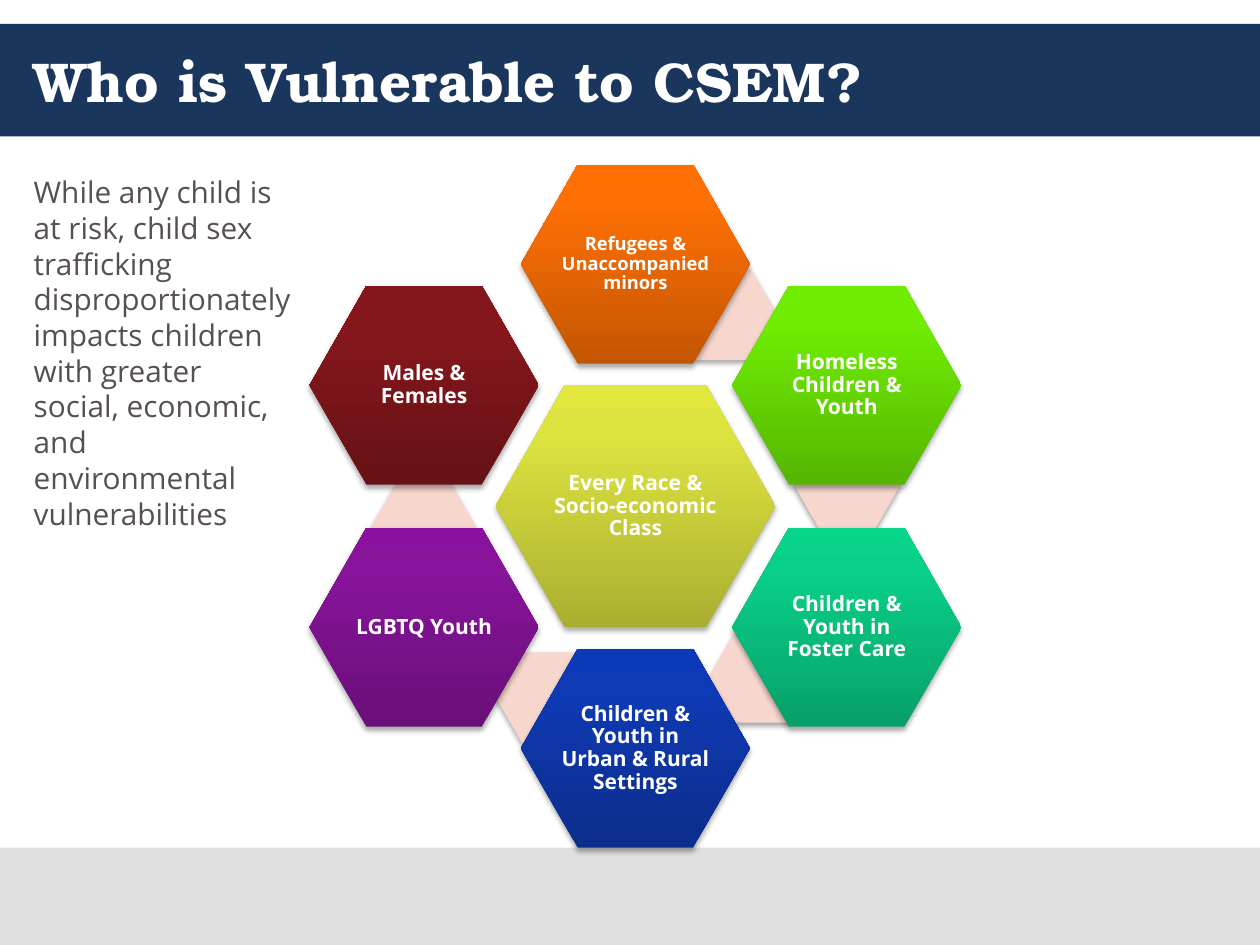
from lxml import etree
from pptx import Presentation
from pptx.dml.color import RGBColor
from pptx.enum.shapes import MSO_SHAPE as SHAPE
from pptx.enum.text import MSO_ANCHOR as ANCHOR, PP_ALIGN as ALIGN
from pptx.oxml import parse_xml
from pptx.oxml.ns import nsdecls, qn
from pptx.util import Cm, Pt

BODY_FONT = "Open Sans"
TITLE_FONT = "TeX Gyre Bonum"
WHITE, NAVY, GREY, TEXT, PINK = "FFFFFF", "1B365D", "E0E0E0", "575050", "F6D6CD"

# Outer hexagons, clockwise from the top:
# text, size, gradient from bottom to top, offset of the pink accent from the centre
RING = [
    ("Refugees & Unaccompanied minors", 10.5, ("C35603", "FE6F04", "FF7004"), (1.78, -3.86)),
    ("Homeless Children & Youth", 12, ("55B501", "6FEC02", "6FEE00"), (4.27, -0.41)),
    ("Children & Youth in Foster Care", 12, ("07A069", "09D088", "06D58A"), (2.54, 3.45)),
    ("Children & Youth in Urban & Rural Settings", 12, ("0C2D8C", "0F3AB5", "0C39B9"),
     (-1.75, 3.86)),
    ("LGBTQ Youth", 12, ("690F78", "88149C", "8A11A0"), (-4.27, 0.43)),
    ("Males & Females", 12, ("661216", "85171C", "88151A"), None),
]
HUB = ("Every Race & Socio-economic Class", 12, ("AAAF31", "DDE33F", "E1E73D"))


def rgb(value):
    return RGBColor.from_string(value)


def write(shape, text, align=ALIGN.LEFT, anchor=ANCHOR.TOP, inset=None, spacing=None, **font):
    tf = shape.text_frame
    tf.word_wrap = True
    tf.vertical_anchor = anchor
    if inset is not None:
        for side in ("left", "top", "right", "bottom"):
            setattr(tf, f"margin_{side}", Cm(inset))
    p = tf.paragraphs[0]
    p.alignment = align
    if spacing:
        p.line_spacing = spacing
    r = p.add_run()
    r.text = text
    r.font.color.rgb = rgb(font.pop("color"))
    for name, value in font.items():
        setattr(r.font, name, value)


def add_bar(shapes, box, color):
    sp = shapes.add_shape(SHAPE.RECTANGLE, *map(Cm, box))
    sp.shadow.inherit = False
    sp.fill.solid()
    sp.fill.fore_color.rgb = rgb(color)
    sp.line.fill.background()


def set_gradient(sp, colors):
    sp.fill.gradient()
    grad = sp._element.spPr.find(qn("a:gradFill"))
    stops = "".join(f'<a:gs pos="{pos}"><a:srgbClr val="{color}"/></a:gs>'
                    for pos, color in zip((0, 80000, 100000), colors))
    new = parse_xml(f'<a:gradFill {nsdecls("a")} rotWithShape="1"><a:gsLst>{stops}</a:gsLst>'
                    '<a:lin ang="16200000" scaled="0"/></a:gradFill>')
    grad.getparent().replace(grad, new)


def set_shadow(sp):
    sp.shadow.inherit = False
    effects = sp._element.spPr.find(qn("a:effectLst"))
    outer = etree.SubElement(effects, qn("a:outerShdw"), blurRad="40000", dist="23000",
                             dir="5400000", rotWithShape="0")
    black = etree.SubElement(outer, qn("a:srgbClr"), val="000000")
    etree.SubElement(black, qn("a:alpha"), val="35000")


def centred(cx, cy, w, h):
    return [Cm(v) for v in (cx - w / 2, cy - h / 2, w, h)]


def add_hexagon(shapes, cx, cy, w, h, adj):
    sp = shapes.add_shape(SHAPE.HEXAGON, *centred(cx, cy, w, h))
    sp.adjustments[0] = adj
    sp.line.fill.background()
    set_shadow(sp)
    return sp


def add_label_hexagon(shapes, cx, cy, w, h, text, size, colors):
    set_gradient(add_hexagon(shapes, cx, cy, w, h, 0.286), colors)
    label = shapes.add_textbox(*centred(cx, cy, w * 0.67, h * 0.67))
    write(label, text, ALIGN.CENTER, ANCHOR.MIDDLE, inset=0.04, spacing=0.9,
          name=BODY_FONT, size=Pt(size), bold=True, color=WHITE)


def add_hexagon_ring(s, box):
    left, top, width, height = box
    cx, cy = left + width / 2, top + height / 2
    w, h = 4.62, 4.01
    dx, dy = (width - w) / 2, (height - h) / 2
    centres = [(0, -dy), (dx, -dy / 2), (dx, dy / 2), (0, dy), (-dx, dy / 2), (-dx, -dy / 2)]
    shapes = s.shapes.add_group_shape().shapes

    add_label_hexagon(shapes, cx, cy, 5.64, 4.88, *HUB)
    for (x, y), (text, size, colors, accent) in zip(centres, RING):
        if accent:
            sp = add_hexagon(shapes, cx + accent[0], cy + accent[1], 2.13, 1.83, 0.289)
            sp.fill.solid()
            sp.fill.fore_color.rgb = rgb(PINK)
        add_label_hexagon(shapes, cx + x, cy + y, w, h, text, size, colors)


def add_title(s, box, text):
    left, top, width, height = box
    add_bar(s.shapes, box, NAVY)
    title = s.shapes.title
    title.left, title.top, title.width, title.height = map(
        Cm, (left + 0.43, top, width - 0.84, height))
    s.shapes._spTree.append(title._element)  # bring the title in front of its bar
    write(title, text, anchor=ANCHOR.MIDDLE,
          name=TITLE_FONT, size=Pt(32), bold=True, color=WHITE)


def add_intro(s, box, text):
    write(s.shapes.add_textbox(*map(Cm, box)), text,
          name=BODY_FONT, size=Pt(17), color=TEXT)


def main():
    prs = Presentation()
    prs.slide_width, prs.slide_height = Cm(25.4), Cm(19.05)
    s = prs.slides.add_slide(prs.slide_layouts[5])

    # Footer band and title band
    add_bar(s.shapes, (0, 17.09, 25.4, 1.96), GREY)
    add_title(s, (0, 0.48, 25.4, 2.27), "Who is Vulnerable to CSEM?")
    # Diagram and text at its left
    add_hexagon_ring(s, (6.24, 3.32, 13.14, 13.77))
    add_intro(s, (0.43, 3.38, 5.72, 7.52),
              "While any child is at risk, child sex trafficking disproportionately impacts "
              "children with greater social, economic, and environmental vulnerabilities")

    prs.save("out.pptx")


if __name__ == "__main__":
    main()
